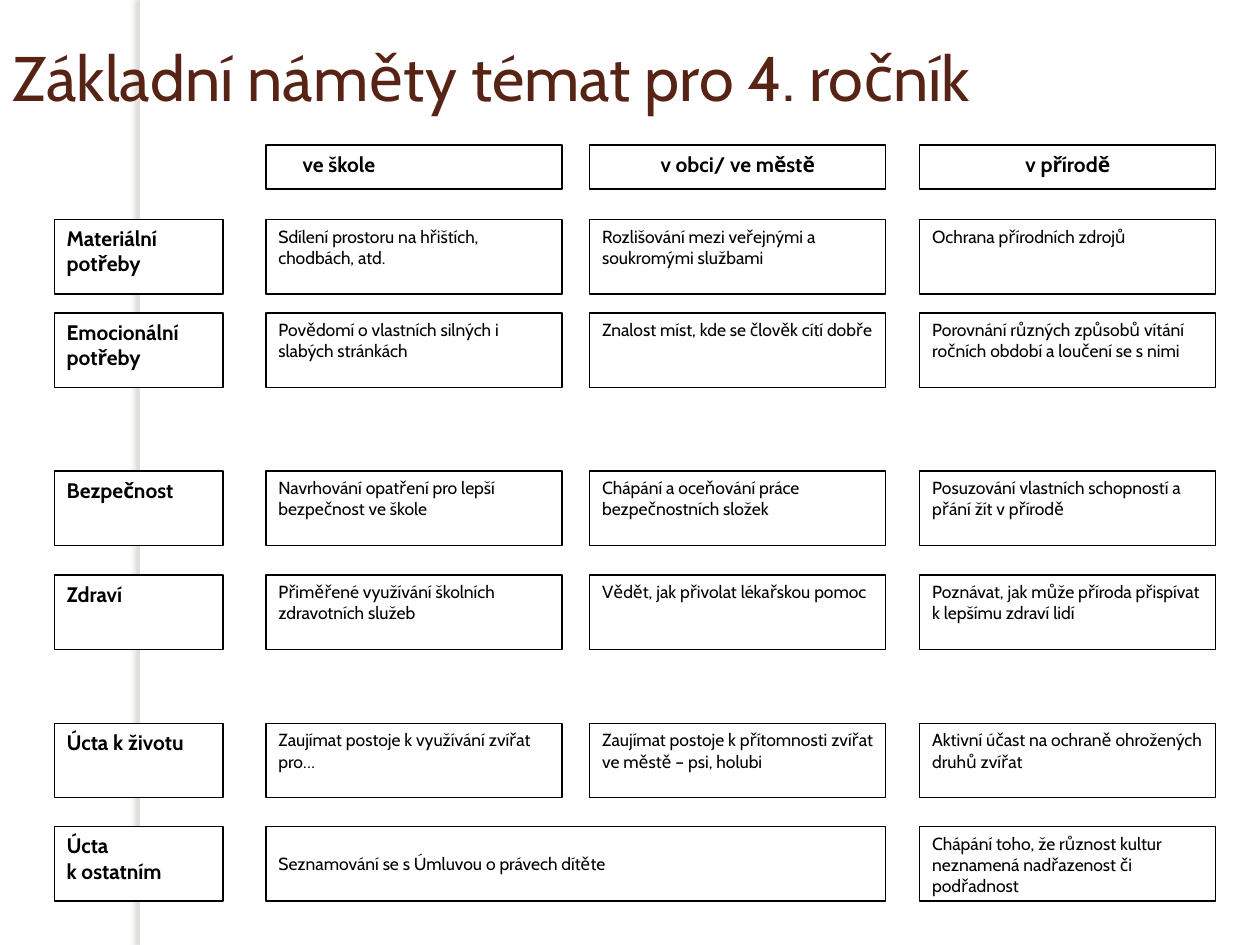
"""Build the slide with basic topic ideas for the 4th grade."""
from lxml.etree import SubElement
from pptx import Presentation
from pptx.dml.color import RGBColor
from pptx.enum.shapes import MSO_SHAPE
from pptx.enum.text import MSO_ANCHOR, MSO_AUTO_SIZE, PP_ALIGN
from pptx.oxml.ns import qn
from pptx.util import Pt

COLORS = {"white": "FFFFFF", "black": "000000", "title": "572314", "shadow": "736F63"}
FONT = "Cabin"
LABEL_LEFT, LABEL_WIDTH = 31, 96.5
COLUMN_LEFTS, COLUMN_WIDTH = [152, 337, 525.6], 169.2
HEADER_TOP, HEADER_HEIGHT, ROW_HEIGHT = 82.8, 25.2, 42.5
WIDE_WIDTH = COLUMN_LEFTS[1] + COLUMN_WIDTH - COLUMN_LEFTS[0]

HEADERS = ["ve škole", "v obci/ ve městě", "v přírodě"]
ROWS = [
    (125.5, "Materiální potřeby", [
        "Sdílení prostoru na hřištích, chodbách, atd.",
        "Rozlišování mezi veřejnými a soukromými službami",
        "Ochrana přírodních zdrojů"]),
    (178.9, "Emocionální potřeby", [
        "Povědomí o vlastních silných i slabých stránkách",
        "Znalost míst, kde se člověk cítí dobře",
        "Porovnání různých způsobů vítání ročních období a loučení se s nimi"]),
    (269.2, "Bezpečnost", [
        "Navrhování opatření pro lepší bezpečnost ve škole",
        "Chápání a oceňování práce bezpečnostních složek",
        "Posuzování vlastních schopností a přání žít v přírodě"]),
    (328.5, "Zdraví", [
        "Přiměřené využívání školních zdravotních služeb",
        "Vědět, jak přivolat lékařskou pomoc",
        "Poznávat, jak může příroda přispívat k lepšímu zdraví lidí"]),
    (413.3, "Úcta k životu", [
        "Zaujímat postoje k využívání zvířat pro…",
        "Zaujímat postoje k přítomnosti zvířat ve městě – psi, holubi",
        "Aktivní účast na ochraně ohrožených druhů zvířat"]),
    (472.4, "Úcta \nk ostatním", [
        "Seznamování se s Úmluvou o právech dítěte",
        None,
        "Chápání toho, že různost kultur neznamená nadřazenost či podřadnost"]),
]

presentation = Presentation()
presentation.slide_width, presentation.slide_height = Pt(720), Pt(540)
slide = presentation.slides.add_slide(presentation.slide_layouts[5])


def format_text(shape, size, color, bold, align):
    for paragraph in shape.text_frame.paragraphs:
        paragraph.alignment = align
        for run in paragraph.runs:
            run.font.name = FONT
            run.font.size = Pt(size)
            run.font.bold = bold
            run.font.color.rgb = RGBColor.from_string(COLORS[color])


def add_box(left, top, width, height, text, size=10, bold=False, align=PP_ALIGN.LEFT):
    box = slide.shapes.add_shape(MSO_SHAPE.RECTANGLE, Pt(left), Pt(top), Pt(width), Pt(height))
    box.shadow.inherit = False
    box.fill.solid()
    box.fill.fore_color.rgb = RGBColor.from_string(COLORS["white"])
    box.line.color.rgb = RGBColor.from_string(COLORS["black"])
    box.line.width = Pt(0.75)
    box.text_frame.word_wrap = True
    box.text_frame.vertical_anchor = MSO_ANCHOR.TOP
    box.text_frame.text = text
    format_text(box, size, "black", bold, align)
    return box


strip = slide.shapes.add_shape(MSO_SHAPE.RECTANGLE, Pt(80), Pt(0), Pt(5.75), Pt(540))
strip.fill.solid()
strip.fill.fore_color.rgb = RGBColor.from_string(COLORS["white"])
strip.line.fill.background()
strip.shadow.inherit = False
effects = strip._element.spPr.find(qn("a:effectLst"))
shadow = SubElement(effects, qn("a:outerShdw"), blurRad=str(Pt(3)), dist=str(Pt(3)),
                    dir="10800000", algn="tl", rotWithShape="0")
shadow_color = SubElement(shadow, qn("a:srgbClr"), val=COLORS["shadow"])
SubElement(shadow_color, qn("a:alpha"), val="25000")
slide.shapes._spTree.insert(2, strip._element)

title = slide.shapes.title
title.left, title.top, title.width, title.height = Pt(0), Pt(21.6), Pt(680.4), Pt(44)
title.text_frame.text = "Základní náměty témat pro 4. ročník"
title.text_frame.word_wrap = True
title.text_frame.auto_size = MSO_AUTO_SIZE.NONE
title.text_frame.vertical_anchor = MSO_ANCHOR.MIDDLE
format_text(title, 36, "title", False, PP_ALIGN.LEFT)

for index, (left, header) in enumerate(zip(COLUMN_LEFTS, HEADERS)):
    align = PP_ALIGN.CENTER if index else PP_ALIGN.LEFT
    header_box = add_box(left, HEADER_TOP, COLUMN_WIDTH, HEADER_HEIGHT, header, 12, True, align)
    if index == 0:
        header_box.text_frame.margin_left = Pt(21)

for top, label, topics in ROWS:
    add_box(LABEL_LEFT, top, LABEL_WIDTH, ROW_HEIGHT, label, 12, True, PP_ALIGN.JUSTIFY)
    spans_two = topics[1] is None
    for index, (left, topic) in enumerate(zip(COLUMN_LEFTS, topics)):
        if topic is None:
            continue
        is_wide = spans_two and index == 0
        width = WIDE_WIDTH if is_wide else COLUMN_WIDTH
        topic_box = add_box(left, top, width, ROW_HEIGHT, topic)
        if is_wide:
            topic_box.text_frame.vertical_anchor = MSO_ANCHOR.MIDDLE

presentation.save("out.pptx")
